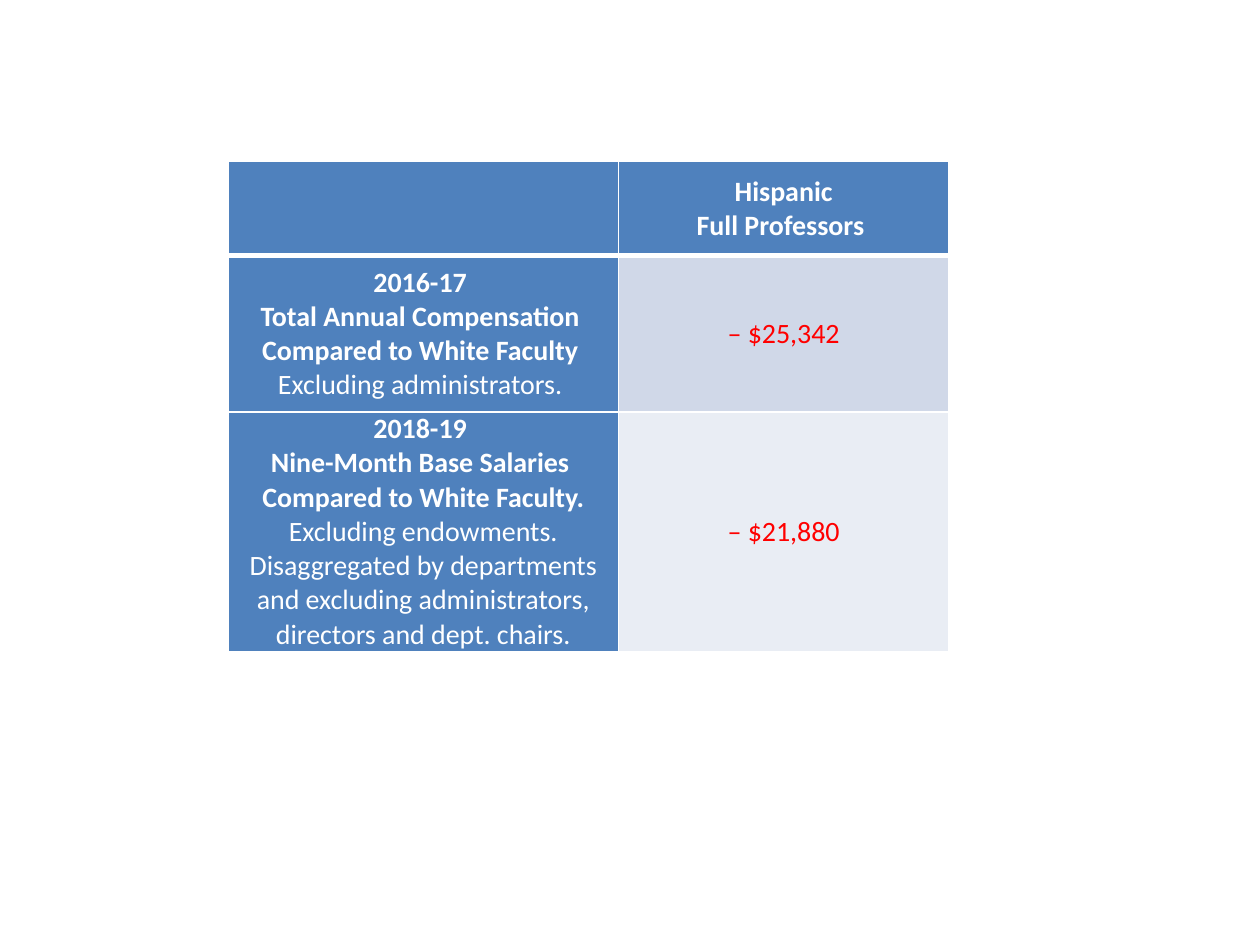
"""Build a slide with a table of faculty pay gaps."""
from lxml.etree import SubElement
from pptx import Presentation
from pptx.dml.color import RGBColor
from pptx.enum.text import MSO_ANCHOR, PP_ALIGN
from pptx.oxml.ns import qn
from pptx.util import Inches, Pt

WHITE, BLUE, RED = "FFFFFF", "4F81BD", "FF0000"


def color(hex_string):
    return RGBColor.from_string(hex_string)


def add_border(cell, side, points):
    line = SubElement(cell._tc.get_or_add_tcPr(), qn(f"a:ln{side}"), w=str(Pt(points)))
    SubElement(SubElement(line, qn("a:solidFill")), qn("a:srgbClr"), val=WHITE)


presentation = Presentation()
presentation.slide_width, presentation.slide_height = Inches(10), Inches(7.5)
slide = presentation.slides.add_slide(presentation.slide_layouts[6])

rows = [
    [
        (BLUE, WHITE, []),
        (BLUE, WHITE, [[("Hispanic", True)], [("Full Professors ", True)]]),
    ],
    [
        (BLUE, WHITE, [
            [("2016-17 ", True)],
            [("Total Annual Compensation ", True)],
            [("Compared to White Faculty ", True)],
            [("Excluding administrators. ", False)],
        ]),
        ("D0D8E8", RED, [[("– $25,342", False)]]),
    ],
    [
        (BLUE, WHITE, [
            [("2018-19 ", True)],
            [("Nine-Month Base Salaries ", True)],
            [
                ("Compared to White Faculty. ", True),
                ("Excluding endowments. Disaggregated by departments and "
                 "excluding administrators, directors and dept. chairs.", False),
            ],
        ]),
        ("E9EDF4", RED, [[("– $21,880", False)]]),
    ],
]
column_widths = [3.1, 2.62]
row_heights = [0.75, 1.24, 1.34]

table = slide.shapes.add_table(
    len(rows), len(column_widths), Inches(1.81), Inches(1.28),
    Inches(sum(column_widths)), Inches(3.86),
).table
table.horz_banding = False
for column, width in zip(table.columns, column_widths):
    column.width = Inches(width)
for row, height in zip(table.rows, row_heights):
    row.height = Inches(height)

for row_index, row_cells in enumerate(rows):
    for column_index, (fill, text_color, paragraphs) in enumerate(row_cells):
        cell = table.cell(row_index, column_index)
        cell.vertical_anchor = MSO_ANCHOR.MIDDLE
        cell.margin_left = cell.margin_right = Inches(0.07)
        cell.margin_top = cell.margin_bottom = 0
        for side in "LRTB":
            thick = (row_index, side) in [(0, "B"), (1, "T")]
            add_border(cell, side, 3 if thick else 1)
        cell.fill.solid()
        cell.fill.fore_color.rgb = color(fill)
        text_frame = cell.text_frame
        for index, runs in enumerate(paragraphs):
            paragraph = text_frame.add_paragraph() if index else text_frame.paragraphs[0]
            paragraph.alignment = PP_ALIGN.CENTER
            for text, bold in runs:
                run = paragraph.add_run()
                run.text = text
                run.font.name = "Calibri"
                run.font.size = Pt(16)
                run.font.bold = bold
                run.font.color.rgb = color(text_color)

presentation.save("out.pptx")
